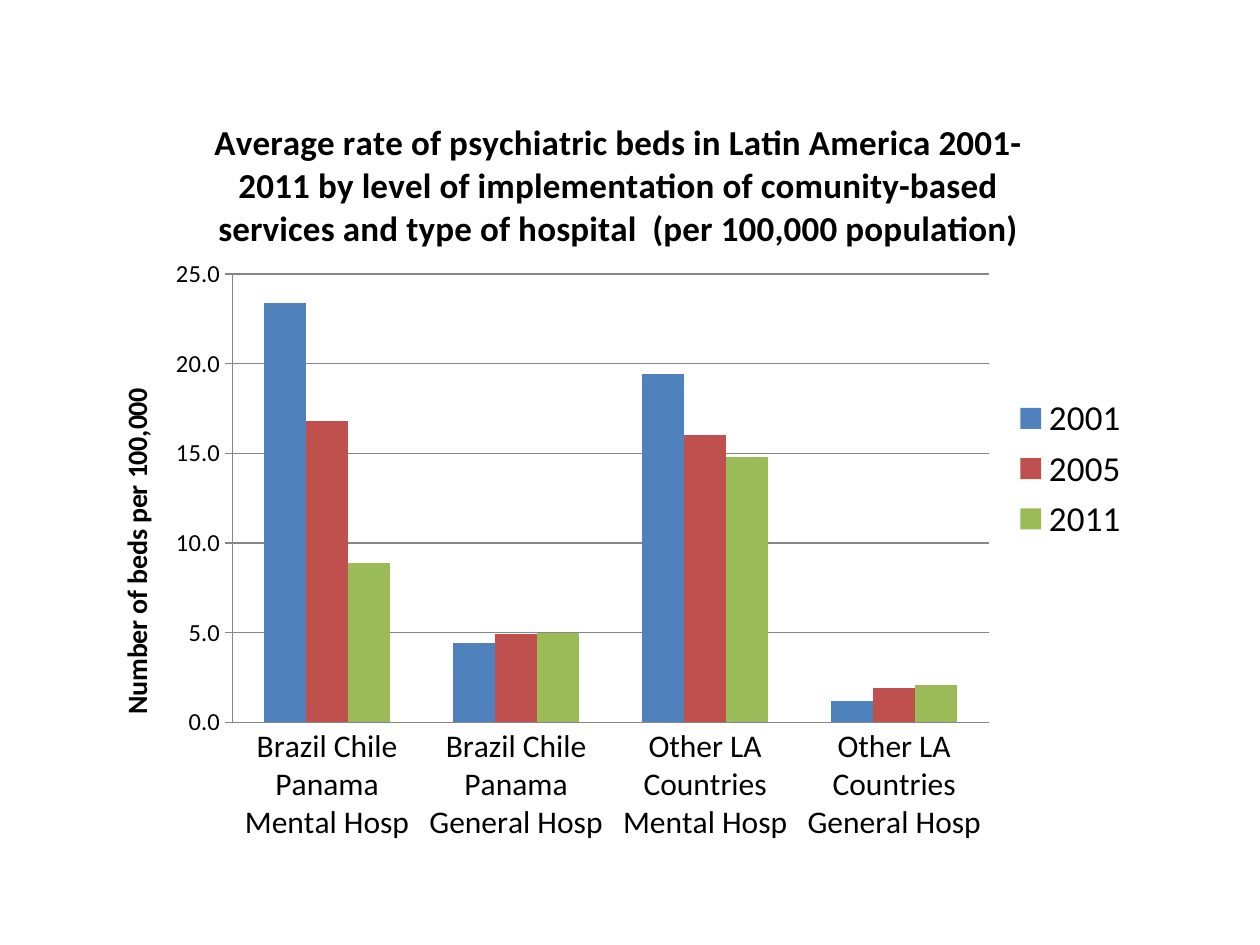
import pptx
import pptx.chart.data
import pptx.dml.color
import pptx.enum.chart
import pptx.oxml
import pptx.oxml.ns
import pptx.util

Inches, Pt = pptx.util.Inches, pptx.util.Pt
RGBColor = pptx.dml.color.RGBColor
enum = pptx.enum.chart
qn = pptx.oxml.ns.qn

BLACK = RGBColor(0, 0, 0)
GREY = RGBColor(0x86, 0x86, 0x86)
BLUE = RGBColor(0x4F, 0x81, 0xBD)
RED = RGBColor(0xC0, 0x50, 0x4D)
GREEN = RGBColor(0x9B, 0xBB, 0x59)


def style(font, **extra):
    look = {"name": "Calibri", "bold": False, **extra}
    for key, value in look.items():
        setattr(font, key, value)
    font.color.rgb = BLACK


def place(part, index, **spots):
    """Give a chart part a manual layout, in fractions of the chart."""
    old = part.find(qn("c:layout"))
    if old is not None:
        part.remove(old)
    rows = "".join(f'<c:{key} val="{val}"/>' for key, val in spots.items())
    part.insert(index, pptx.oxml.parse_xml(
        f'<c:layout {pptx.oxml.ns.nsdecls("c")}>'
        f"<c:manualLayout>{rows}</c:manualLayout></c:layout>"))


deck = pptx.Presentation()
deck.slide_width, deck.slide_height = Inches(10), Inches(7.5)
slide = deck.slides.add_slide(deck.slide_layouts[6])

# Bed rates by year
rates = {
    "2001": ((23.4, 4.4, 19.4, 1.2), BLUE),
    "2005": ((16.8, 4.9, 16, 1.9), RED),
    "2011": ((8.9, 5, 14.8, 2.1), GREEN),
}
data = pptx.chart.data.CategoryChartData(number_format="0.0")
data.categories = [f"{place_name} {kind} Hosp"
                   for place_name in ("Brazil Chile Panama", "Other LA Countries")
                   for kind in ("Mental", "General")]
for year, (values, _) in rates.items():
    data.add_series(year, values)

# Column chart
chart = slide.shapes.add_chart(
    enum.XL_CHART_TYPE.COLUMN_CLUSTERED, Inches(0.64), Inches(0.63),
    Inches(8.43), Inches(6.18), data).chart
style(chart.font, size=Pt(10))
plot = chart.plots[0]
plot.gap_width, plot.overlap, plot.vary_by_categories = 150, 0, False
for series, (_, color) in zip(plot.series, rates.values()):
    series.format.fill.solid()
    series.format.fill.fore_color.rgb = color

# Axes
across, up = chart.category_axis, chart.value_axis
formats = {
    across: {"major_tick_mark": enum.XL_TICK_MARK.NONE},
    up: {"major_tick_mark": enum.XL_TICK_MARK.OUTSIDE, "minimum_scale": 0,
         "maximum_scale": 25, "major_unit": 5, "has_major_gridlines": True},
}
for axis, look in formats.items():
    for key, value in look.items():
        setattr(axis, key, value)
    axis.format.line.color.rgb = GREY
    axis.format.line.width = Pt(0.75)
style(across.tick_labels.font, size=Pt(18))
style(up.tick_labels.font, size=Pt(14))
up.tick_labels.number_format = "0.0"
up.tick_labels.number_format_is_linked = False
up.major_gridlines.format.line.color.rgb = GREY
up.major_gridlines.format.line.width = Pt(0.75)

# Titles
titles = (
    (chart, 20, "Average rate of psychiatric beds in Latin America 2001-2011 "
     "by level of implementation of comunity-based services and type of "
     "hospital  (per 100,000 population)"),
    (up, 16, "Number of beds per 100,000"),
)
for owner, size, text in titles:
    owner.has_title = True
    frame = owner.axis_title.text_frame if owner is up else owner.chart_title.text_frame
    frame.text = text
    style(frame.paragraphs[0].runs[0].font, size=Pt(size), bold=True)
chart.chart_title.include_in_layout = False

# Legend
chart.has_legend = True
chart.legend.position = enum.XL_LEGEND_POSITION.RIGHT
chart.legend.include_in_layout = False
style(chart.legend.font, size=Pt(20))

# Manual layout
area = chart.element.find(".//" + qn("c:plotArea"))
place(area, 0, layoutTarget="inner", xMode="edge", yMode="edge",
      x=0.143, y=0.25, w=0.712, h=0.576)
place(area.find(".//" + qn("c:title")), 1, xMode="edge", yMode="edge",
      x=0.03, y=0.39)
place(chart.element.find(qn("c:chart")).find(qn("c:title")), 1,
      xMode="edge", yMode="edge", x=0.12, y=0.04)

deck.save("out.pptx")
